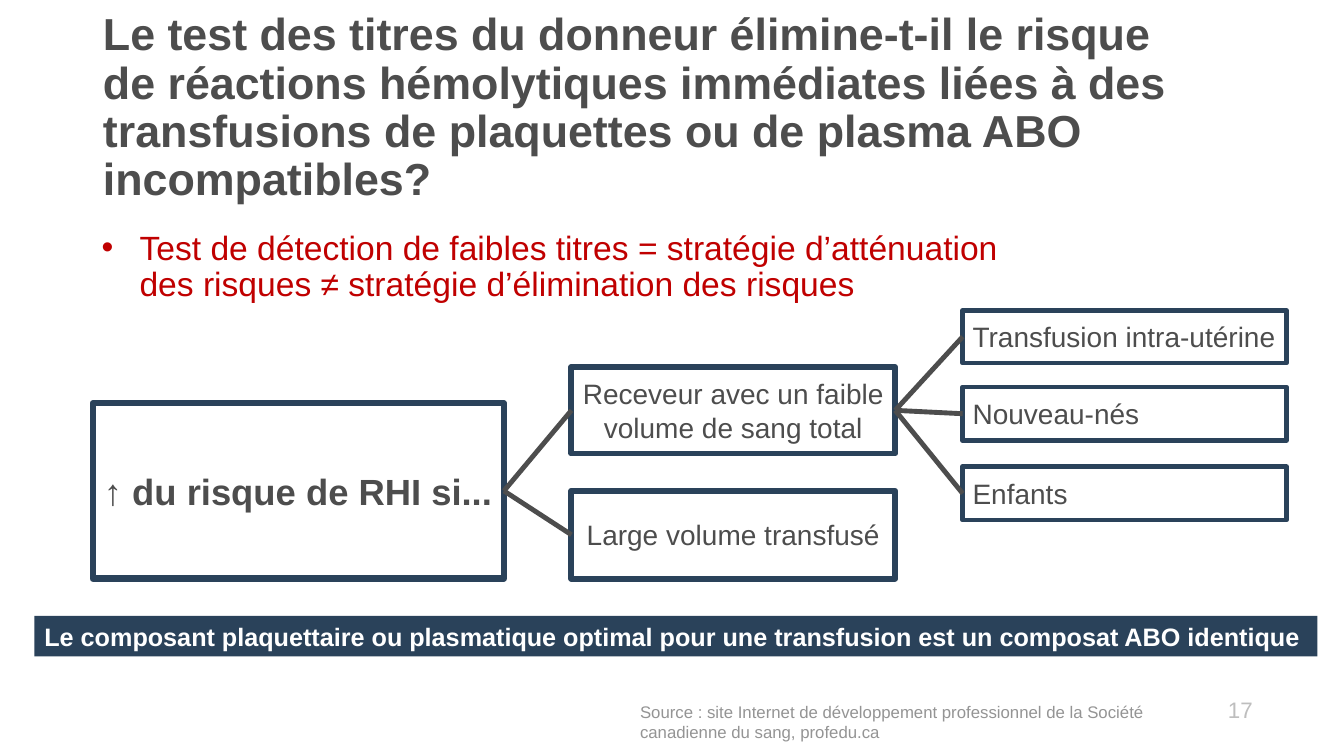
from dataclasses import dataclass

from lxml import etree
from pptx import Presentation
from pptx.dml.color import RGBColor
from pptx.enum.shapes import MSO_CONNECTOR, MSO_SHAPE
from pptx.enum.text import MSO_ANCHOR, MSO_AUTO_SIZE, PP_ALIGN
from pptx.oxml.ns import qn
from pptx.shapes.autoshape import Shape
from pptx.slide import Slide
from pptx.util import Cm, Pt

RECT = MSO_SHAPE.RECTANGLE
STRAIGHT = MSO_CONNECTOR.STRAIGHT
TOP, MIDDLE, BOTTOM = MSO_ANCHOR.TOP, MSO_ANCHOR.MIDDLE, MSO_ANCHOR.BOTTOM
LEFT, CENTER, RIGHT = PP_ALIGN.LEFT, PP_ALIGN.CENTER, PP_ALIGN.RIGHT
NO_AUTOFIT = MSO_AUTO_SIZE.NONE
LEFT_SITE, RIGHT_SITE = 1, 3
FONT = "Arial"
COLORS = {
    "text": "4D4D4D",
    "navy": "2A425A",
    "red": "C00000",
    "white": "FFFFFF",
    "source": "949494",
    "number": "BEBEBE",
}


@dataclass(frozen=True)
class Area:
    left: float
    top: float
    width: float
    height: float


@dataclass(frozen=True)
class Style:
    size: float
    color: str = "text"
    bold: bool = False
    align: PP_ALIGN = LEFT
    anchor: MSO_ANCHOR = MIDDLE
    spacing: float = 1.0


@dataclass(frozen=True)
class Node:
    text: str
    area: Area
    line: float
    style: Style
    parent: int | None = None


MAIN = Style(26, bold=True, align=CENTER)
CAUSE = Style(20, align=CENTER)
GROUP = Style(20)
NODES = [
    Node("↑ du risque de RHI si...", Area(2.34, 10.16, 10.36, 4.42), 4.5, MAIN),
    Node("Receveur avec un faible volume de sang total",
         Area(14.4, 9.25, 8.16, 2.18), 4.25, CAUSE, 0),
    Node("Large volume transfusé", Area(14.4, 12.37, 8.16, 2.21), 4.25, CAUSE, 0),
    Node("Transfusion intra-utérine", Area(24.26, 7.82, 8.16, 1.33), 3.25, GROUP, 1),
    Node("Nouveau-nés", Area(24.26, 9.75, 8.16, 1.35), 3.25, GROUP, 1),
    Node("Enfants", Area(24.26, 11.76, 8.16, 1.35), 3.25, GROUP, 1),
]


def rgb(name: str) -> RGBColor:
    return RGBColor.from_string(COLORS[name])


def box(area: Area) -> tuple[Cm, Cm, Cm, Cm]:
    return Cm(area.left), Cm(area.top), Cm(area.width), Cm(area.height)


def write(sp: Shape, text: str, style: Style) -> None:
    tf = sp.text_frame
    tf.text = text
    tf.word_wrap = True
    tf.auto_size = NO_AUTOFIT
    tf.vertical_anchor = style.anchor
    p = tf.paragraphs[0]
    p.alignment = style.align
    p.line_spacing = style.spacing
    p.space_before = Pt(0)
    for r in p.runs:
        r.font.name = FONT
        r.font.size = Pt(style.size)
        r.font.bold = style.bold
        r.font.color.rgb = rgb(style.color)


def fill_placeholder(sp: Shape, area: Area, text: str, style: Style) -> None:
    sp.left, sp.top, sp.width, sp.height = box(area)
    pPr = sp.text_frame.paragraphs[0]._p.get_or_add_pPr()
    pPr.set("marL", "0")
    pPr.set("indent", "0")
    etree.SubElement(pPr, qn("a:buNone"))
    write(sp, text, style)


def add_label(s: Slide, area: Area, text: str, style: Style) -> None:
    write(s.shapes.add_textbox(*box(area)), text, style)


def add_rect(s: Slide, area: Area, text: str, style: Style) -> Shape:
    sp = s.shapes.add_shape(RECT, *box(area))
    sp.shadow.inherit = False
    write(sp, text, style)
    return sp


def add_node(s: Slide, node: Node) -> Shape:
    sp = add_rect(s, node.area, node.text, node.style)
    sp.fill.background()
    sp.line.color.rgb = rgb("navy")
    sp.line.width = Pt(node.line)
    return sp


def add_link(s: Slide, parent: Shape, child: Shape) -> None:
    link = s.shapes.add_connector(STRAIGHT, 0, 0, 0, 0)
    link.begin_connect(parent, RIGHT_SITE)
    link.end_connect(child, LEFT_SITE)
    link.line.color.rgb = rgb("text")
    link.line.width = Pt(3.5)
    etree.SubElement(link._element.spPr, qn("a:effectLst"))


def main() -> None:
    prs = Presentation()
    prs.slide_width, prs.slide_height = Cm(33.87), Cm(19.05)
    s = prs.slides.add_slide(prs.slide_layouts[1])

    fill_placeholder(
        s.shapes.title, Area(2.34, 2.69, 29.41, 2.62),
        "Le test des titres du donneur élimine-t-il le risque\v"
        "de réactions hémolytiques immédiates liées à des transfusions "
        "de plaquettes ou de plasma ABO incompatibles?",
        Style(32, bold=True, anchor=BOTTOM, spacing=0.9))
    fill_placeholder(
        s.placeholders[1], Area(2.31, 4.34, 23.57, 4.8),
        "Test de détection de faibles titres = stratégie d’atténuation "
        "des risques ≠ stratégie d’élimination des risques",
        Style(24, "red", spacing=0.9))

    shapes = [add_node(s, node) for node in NODES]
    for node, sp in zip(NODES, shapes):
        if node.parent is not None:
            add_link(s, shapes[node.parent], sp)

    add_label(
        s, Area(15.88, 17.55, 15.32, 1.27),
        "Source : site Internet de développement professionnel "
        "de la Société canadienne du sang, profedu.ca",
        Style(12, "source", anchor=TOP))
    add_label(s, Area(2.41, 16.81, 29.41, 2.24), "17",
              Style(16, "number", align=RIGHT, spacing=0.9))

    banner = add_rect(
        s, Area(0.87, 15.52, 32.33, 1.02),
        "Le composant plaquettaire ou plasmatique optimal pour une transfusion "
        "est un composat ABO identique",
        Style(18, "white", bold=True, anchor=TOP))
    banner.fill.solid()
    banner.fill.fore_color.rgb = rgb("navy")
    banner.line.fill.background()

    prs.save("out.pptx")


if __name__ == "__main__":
    main()
